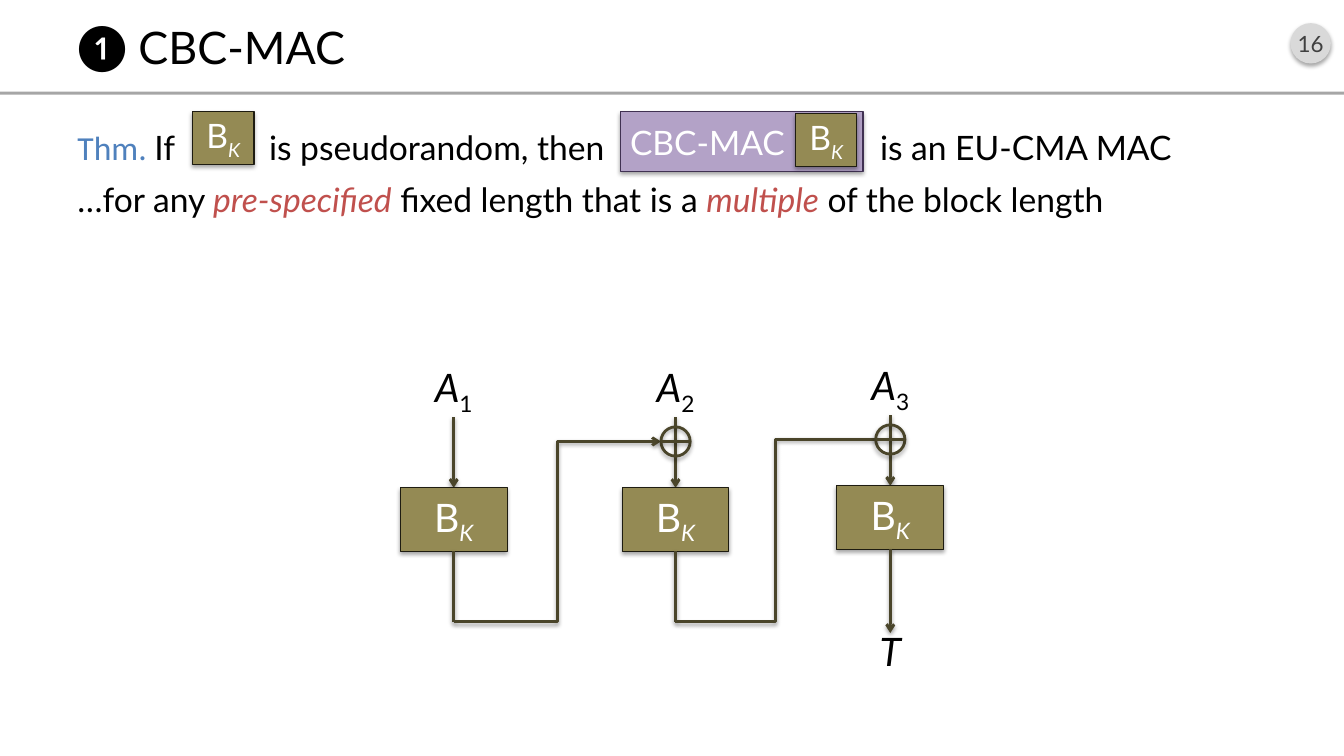
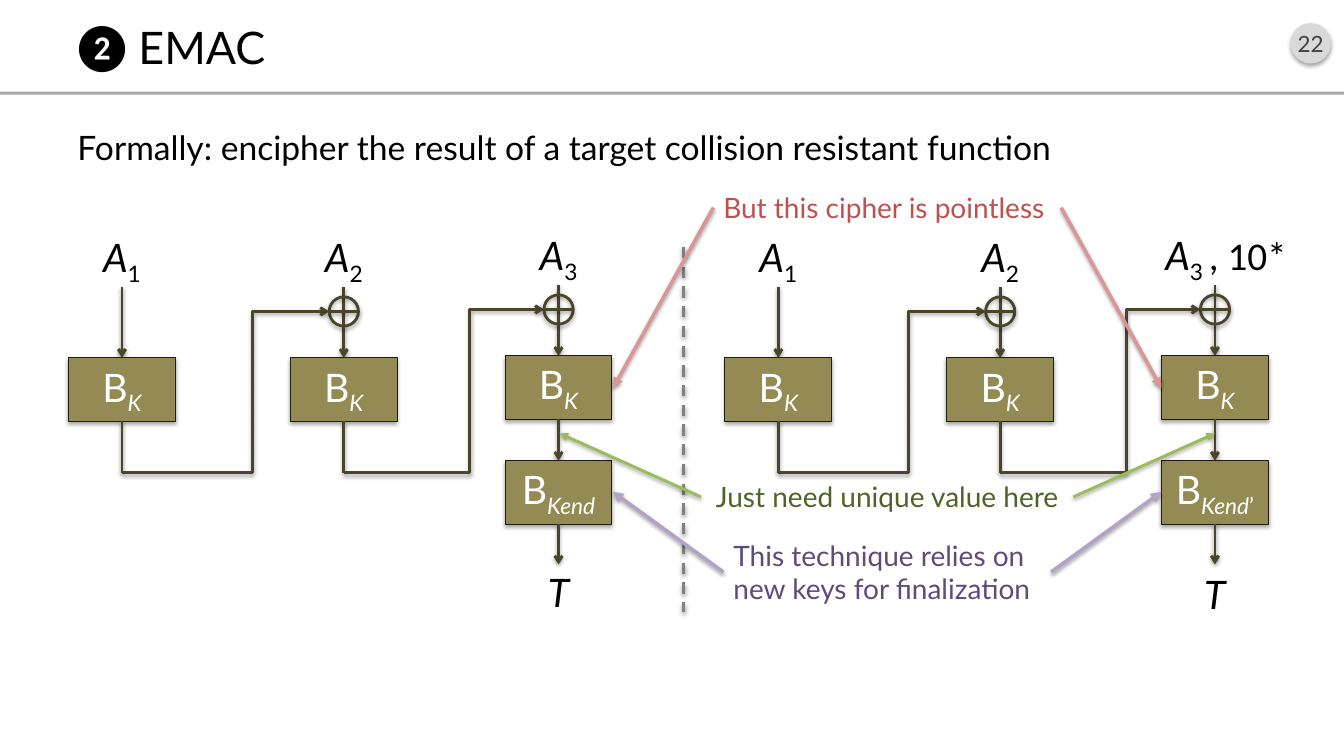
from collections import namedtuple

from lxml import etree
from pptx import Presentation
from pptx.dml.color import RGBColor
from pptx.enum import dml, shapes, text
from pptx.oxml import ns
from pptx.util import Inches, Pt

BLACK = RGBColor(0x00, 0x00, 0x00)
WHITE = RGBColor(0xFF, 0xFF, 0xFF)
LIGHT_GREY = RGBColor(0xD9, 0xD9, 0xD9)
RULE_GREY = RGBColor(0xA6, 0xA6, 0xA6)
MID_GREY = RGBColor(0x80, 0x80, 0x80)
DARK_GREY = RGBColor(0x40, 0x40, 0x40)
OLIVE = RGBColor(0x94, 0x8A, 0x54)
OLIVE_EDGE = RGBColor(0x1E, 0x1C, 0x11)
WIRE = RGBColor(0x4A, 0x45, 0x2A)
BLUE = RGBColor(0x4F, 0x81, 0xBD)
RED = RGBColor(0xC0, 0x50, 0x4D)
PINK = RGBColor(0xD9, 0x96, 0x94)
LILAC = RGBColor(0xB3, 0xA2, 0xC7)
PURPLE = RGBColor(0x60, 0x4A, 0x7B)
PURPLE_EDGE = RGBColor(0x40, 0x31, 0x52)
GREEN = RGBColor(0x9B, 0xBB, 0x59)
DARK_GREEN = RGBColor(0x4F, 0x62, 0x28)

FONT = "Lato"
LEFT, CENTER = text.PP_ALIGN.LEFT, text.PP_ALIGN.CENTER
TOP, MIDDLE = text.MSO_ANCHOR.TOP, text.MSO_ANCHOR.MIDDLE
RECT, OVAL = shapes.MSO_SHAPE.RECTANGLE, shapes.MSO_SHAPE.OVAL

BLOCK_W, BLOCK_H = 1.06, 0.63
LABEL_H = 0.57
XOR_D = 0.29
COLUMNS = [(0, 0), (2.2, 0), (4.33, -0.02)]
ARROW_DY, BLOCK_DY, XOR_DY = 0.58, 1.28, 0.82
CALLOUT_AXIS = 8.8

Run = namedtuple("Run", "text color italic sub font", defaults=(BLACK, False, False, FONT))


def child(parent, tag, **attrs):
    return etree.SubElement(parent, ns.qn(tag), {k: str(v) for k, v in attrs.items()})


def add_shadow(effects, dist, alpha):
    shadow = child(effects, "a:outerShdw", blurRad=Pt(3.1), dist=Pt(dist),
                   dir=5400000, rotWithShape=0)
    child(child(shadow, "a:srgbClr", val="000000"), "a:alpha", val=alpha * 1000)


def write(sp, paragraphs, size, align=LEFT, anchor=TOP, inset=0.1, before=0):
    tf = sp.text_frame
    tf.word_wrap = True
    tf.vertical_anchor = anchor
    tf.margin_left = tf.margin_right = Inches(inset)
    tf.margin_top = tf.margin_bottom = Inches(0.05)
    for i, runs in enumerate(paragraphs):
        p = tf.add_paragraph() if i else tf.paragraphs[0]
        p.alignment = align
        p.space_before = Pt(before)
        for run in runs:
            r = p.add_run()
            r.text = run.text
            r.font.name = run.font
            r.font.size = Pt(size)
            r.font.italic = run.italic
            r.font.color.rgb = run.color
            if run.sub:
                r.font._element.set("baseline", "-25000")


def add_text(s, box, paragraphs, size, **style):
    sp = s.shapes.add_textbox(*map(Inches, box))
    write(sp, paragraphs, size, **style)
    return sp


def add_box(s, kind, box, fill=None, edge=None, weight=0.75, shadow=True):
    sp = s.shapes.add_shape(kind, *map(Inches, box))
    if fill is None:
        sp.fill.background()
    else:
        sp.fill.solid()
        sp.fill.fore_color.rgb = fill
    if edge is None:
        sp.line.fill.background()
    else:
        sp.line.color.rgb = edge
        sp.line.width = Pt(weight)
    sp.shadow.inherit = False
    if shadow:
        add_shadow(sp._element.spPr.find(ns.qn("a:effectLst")), 1.8, 35)
    return sp


def add_line(s, start, end, color=WIRE, weight=2, tail=None, dash=None, bend=None):
    """Straight line, or an elbow that turns at the fraction bend of its width."""
    kind = shapes.MSO_CONNECTOR.STRAIGHT if bend is None else shapes.MSO_CONNECTOR.ELBOW
    c = s.shapes.add_connector(kind, *map(Inches, (*start, *end)))
    c.line.color.rgb = color
    c.line.width = Pt(weight)
    if dash:
        c.line.dash_style = dash
    sp_pr = c._element.spPr
    if tail:
        child(sp_pr.find(ns.qn("a:ln")), "a:tailEnd", type=tail)
    if bend is not None:
        geometry = sp_pr.find(ns.qn("a:prstGeom"))
        guides = geometry.find(ns.qn("a:avLst"))
        if guides is None:
            guides = child(geometry, "a:avLst")
        child(guides, "a:gd", name="adj1", fmla=f"val {round(bend * 100000)}")
    add_shadow(child(sp_pr, "a:effectLst"), 1.6, 38)


def add_frame(s, title, number):
    """Title, rule and page badge, the same on every slide."""
    badge = add_box(s, OVAL, (12.8, 0.23, 0.4, 0.4), LIGHT_GREY)
    write(badge, [[Run(number, DARK_GREY)]], 16, align=CENTER, anchor=MIDDLE, inset=0)
    add_box(s, RECT, (0, 0.91, 13.33, 0.03), RULE_GREY, shadow=False)
    add_text(s, (0.67, 0.16, 12, 0.6), [[Run(title)]], 32, anchor=MIDDLE)


def add_body(s, paragraphs):
    return add_text(s, (0.67, 1.21, 12, 5.75), paragraphs, 24, before=8)


def add_cipher(s, box, size=28, key="K", suffix=""):
    sp = add_box(s, RECT, box, OLIVE, OLIVE_EDGE)
    runs = [Run("B", WHITE), Run(key, WHITE, True, True)]
    if suffix:
        runs.append(Run(suffix, WHITE, False, True))
    write(sp, [runs], size, align=CENTER, anchor=MIDDLE, inset=0)


def add_block(s, x, y, **key):
    add_cipher(s, (x - BLOCK_W / 2, y, BLOCK_W, BLOCK_H), **key)


def add_label(s, x, y, runs, width=1):
    add_text(s, (x - width / 2, y, width, LABEL_H), [runs], 28, align=CENTER, inset=0)


def add_xor(s, x, y):
    r = XOR_D / 2
    add_box(s, OVAL, (x - r, y - r, XOR_D, XOR_D), edge=WIRE, weight=2)
    add_line(s, (x - r, y), (x + r, y))


def add_chain(s, left, top, low, bends, last_tail="arrow", suffix=None):
    """Three chained cipher blocks; returns the centre and bottom of the last one."""
    tails = ["arrow", last_tail]
    for i, (dx, dy) in enumerate(COLUMNS):
        x, y = left + dx, top + dy
        bottom = y + BLOCK_DY + BLOCK_H
        last = i == len(COLUMNS) - 1
        runs = [Run("A", italic=True), Run(str(i + 1), sub=True)]
        if last and suffix:
            runs += [Run(" ", sub=True), Run(suffix, font="Calibri")]
            add_label(s, x + 0.11, y, runs, 1.86)
        else:
            add_label(s, x, y, runs)
        add_line(s, (x, y + ARROW_DY), (x, y + BLOCK_DY), tail="arrow")
        add_block(s, x, y + BLOCK_DY)
        if i:
            add_xor(s, x, y + XOR_DY)
        if not last:
            next_dx, next_dy = COLUMNS[i + 1]
            target = (left + next_dx - XOR_D / 2, top + next_dy + XOR_DY)
            add_line(s, (x, bottom), (x, low))
            add_line(s, (x, low), target, tail=tails[i], bend=bends[i])
    return x, bottom


def add_tag(s, x, y):
    add_label(s, x, y, [Run("T", italic=True)])


def add_callout(s, words, color, arrow, top, size, reach, target_y, weight=2.5, align=LEFT):
    """Note with one arrow to each side, mirrored about the axis."""
    w, h = size
    add_text(s, (CALLOUT_AXIS - w / 2, top, w, h), [[Run(words, color)]], 20, align=align)
    for side in (1, -1):
        add_line(s, (CALLOUT_AXIS + side * w / 2, top + h / 2),
                 (CALLOUT_AXIS + side * reach, target_y), arrow, weight, "triangle")


def build_cbc_mac(s):
    add_frame(s, "❶ CBC-MAC", "16")
    body = add_body(s, [
        [Run("Thm. ", BLUE, font="Calibri"),
         Run("If\tis pseudorandom, then\tis an EU-CMA MAC")],
        [Run("…for any "), Run("pre-specified", RED, True),
         Run(" fixed length that is a "), Run("multiple", RED, True),
         Run(" of the block length")],
    ])
    tabs = child(body.text_frame.paragraphs[0]._p.get_or_add_pPr(), "a:tabLst")
    for stop in (1.9, 7.96):
        child(tabs, "a:tab", pos=Inches(stop), algn="l")
    mac = add_box(s, RECT, (6.15, 1.11, 2.41, 0.59), LILAC, PURPLE_EDGE)
    write(mac, [[Run("CBC-MAC", WHITE)]], 24, anchor=MIDDLE)
    for x, y in ((7.89, 1.13), (1.91, 1.11)):
        add_cipher(s, (x, y, 0.61, 0.52), 24)

    x, bottom = add_chain(s, 4.5, 3.56, 6.17, (0.5, 0.5), last_tail=None)
    add_line(s, (x, bottom), (x, 6.28), tail="arrow")
    add_tag(s, x, 6.17)


def build_emac(s):
    add_frame(s, "❷ EMAC", "22")
    add_body(s, [[Run("Formally: encipher the result of a target collision resistant function")]])
    for left, suffix, prime, tag_y in ((1.21, None, "", 5.59), (7.72, ", 10*", "’", 5.61)):
        x, bottom = add_chain(s, left, 2.27, 4.69, (0.63, 0.63), suffix=suffix)
        add_line(s, (x, bottom), (x, 4.57), tail="arrow")
        add_block(s, x, 4.57, key="Kend", suffix=prime)
        add_line(s, (x, 5.2), (x, 5.6), tail="arrow")
        add_tag(s, x, tag_y)

    add_line(s, (6.78, 2.45), (6.78, 6.07), MID_GREY, dash=dml.MSO_LINE.DASH)
    add_callout(s, "This technique relies on new keys for finalization",
                PURPLE, LILAC, 5.29, (3.25, 0.77), 2.72, 4.88)
    add_callout(s, "But this cipher is pointless",
                RED, PINK, 1.84, (3.45, 0.44), 2.72, 3.85)
    add_callout(s, "Just need unique value here",
                DARK_GREEN, GREEN, 4.71, (3.69, 0.44), 3.25, 4.3, weight=2, align=CENTER)


def main():
    prs = Presentation()
    prs.slide_width, prs.slide_height = Inches(13.33), Inches(7.5)
    for build in (build_cbc_mac, build_emac):
        build(prs.slides.add_slide(prs.slide_layouts[6]))
    prs.save("out.pptx")


if __name__ == "__main__":
    main()
